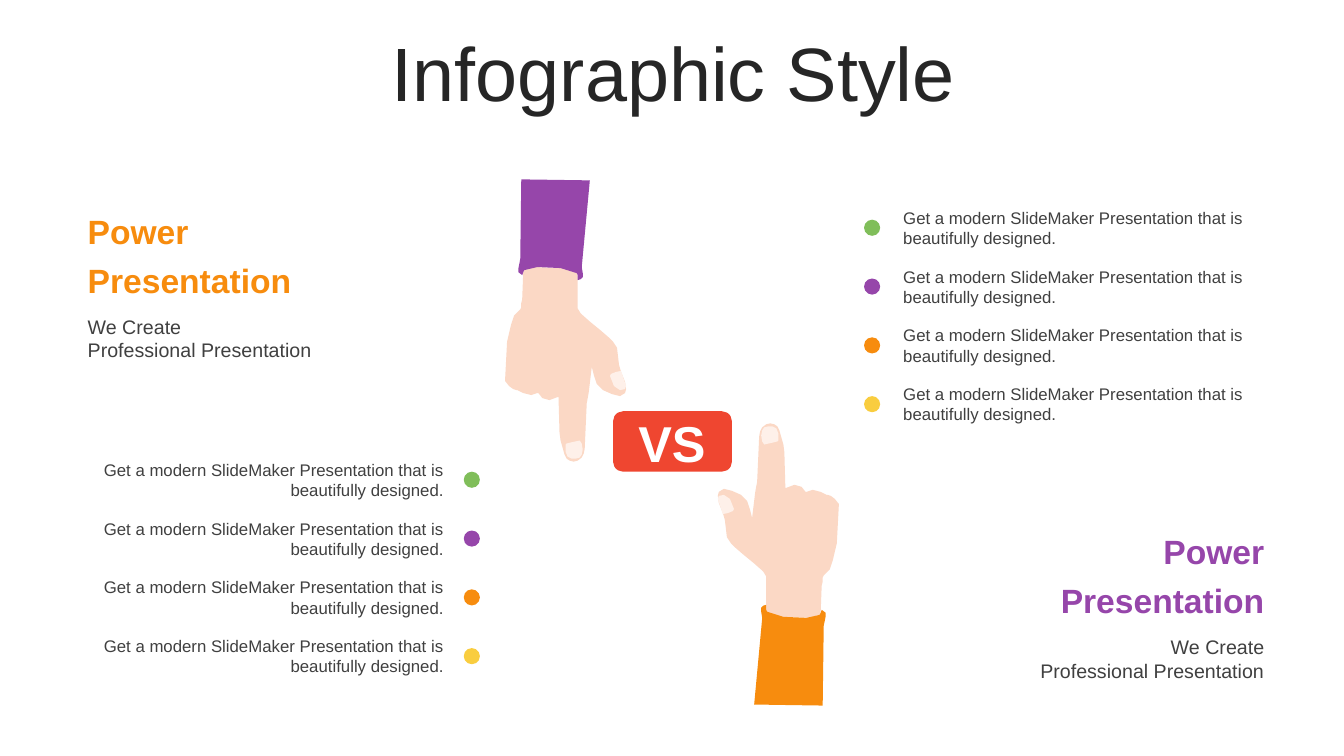
from pptx import Presentation
from pptx.dml.color import RGBColor
from pptx.enum.shapes import MSO_SHAPE
from pptx.enum.text import MSO_ANCHOR, PP_ALIGN
from pptx.util import Inches, Pt

FONT = "Arial"
INK = RGBColor(0x26, 0x26, 0x26)
GREY = RGBColor(0x40, 0x40, 0x40)
WHITE = RGBColor(0xFF, 0xFF, 0xFF)
GREEN = RGBColor(0x80, 0xBE, 0x5A)
PURPLE = RGBColor(0x96, 0x46, 0xAA)
ORANGE = RGBColor(0xF7, 0x8C, 0x0E)
YELLOW = RGBColor(0xF9, 0xCD, 0x3F)
RED = RGBColor(0xEF, 0x46, 0x30)
SKIN = RGBColor(0xFB, 0xD8, 0xC5)
NAIL = RGBColor(0xFE, 0xF0, 0xE9)

DOT_COLORS = [GREEN, PURPLE, ORANGE, YELLOW]
POINT_TEXT = "Get a modern SlideMaker Presentation that is beautifully designed."

# Outlines of the pointing hand, in hundredths of an inch
HAND = [
    (114, 208), (115, 181), (116, 177), (116, 173), (117, 171), (123, 165),
    (126, 156), (130, 139), (132, 101), (132, 100), (128, 95), (124, 92),
    (121, 91), (120, 91), (114, 88), (106, 86), (100, 88), (99, 88),
    (95, 83), (88, 81), (80, 84), (79, 84), (78, 49), (77, 41), (73, 27),
    (71, 23), (68, 21), (64, 20), (60, 21), (56, 24), (54, 28), (53, 33),
    (51, 78), (50, 83), (49, 89), (46, 114), (44, 106), (41, 97), (35, 91),
    (26, 87), (18, 85), (13, 88), (12, 92), (13, 99), (17, 109), (19, 116),
    (21, 133), (25, 139), (29, 143), (37, 150), (48, 159), (57, 167),
    (60, 172), (60, 205), (61, 208), (77, 212), (102, 213), (113, 210),
]
SLEEVE = [
    (48, 299), (56, 213), (55, 207), (55, 203), (57, 201), (60, 200),
    (60, 205), (61, 207), (77, 212), (100, 213), (113, 210), (114, 208),
    (115, 205), (119, 208), (119, 211), (117, 221), (116, 300),
]
THUMB_NAIL = [(12, 95), (13, 92), (18, 91), (24, 95), (28, 105), (27, 107),
              (22, 109), (17, 110)]
FINGER_NAIL = [(72, 30), (72, 37), (71, 38), (67, 39), (58, 41), (56, 38),
               (55, 32), (56, 27), (58, 24), (62, 23), (66, 23), (70, 25)]


def paint(shape, color):
    shape.shadow.inherit = False
    shape.fill.solid()
    shape.fill.fore_color.rgb = color
    shape.line.fill.background()


def add_text(page, box, lines, size, color, bold=False, align=PP_ALIGN.LEFT,
             spacing=None, anchor=MSO_ANCHOR.TOP, insets=None):
    frame = page.shapes.add_textbox(*map(Inches, box)).text_frame
    frame.word_wrap = True
    frame.vertical_anchor = anchor
    if insets:
        (frame.margin_left, frame.margin_top,
         frame.margin_right, frame.margin_bottom) = map(Inches, insets)
    for index, line in enumerate(lines):
        para = frame.add_paragraph() if index else frame.paragraphs[0]
        para.alignment = align
        if spacing:
            para.line_spacing = spacing
        span = para.add_run()
        span.text = line
        span.font.name = FONT
        span.font.size = Pt(size)
        span.font.bold = bold
        span.font.color.rgb = color


def add_heading(page, box, color, align):
    left, top, width, height = box
    insets = (0.08, 0, 0.04, 0)
    add_text(page, (left, top, width, 0.94), ["Power", "Presentation"], 24,
             color, bold=True, align=align, spacing=Pt(35), insets=insets)
    add_text(page, (left, top + height - 0.47, width, 0.47),
             ["We Create", "Professional Presentation"], 14, GREY,
             align=align, insets=insets)


def add_points(page, box, dots_on_right):
    left, top, width, height = box
    text_width, text_height, dot = 3.71, 0.5, 0.16
    pitch = (height - text_height) / (len(DOT_COLORS) - 1)
    if dots_on_right:
        text_left, dot_left, align = left, left + width - dot, PP_ALIGN.RIGHT
    else:
        text_left, dot_left, align = left + width - text_width, left, PP_ALIGN.LEFT
    for row, color in enumerate(DOT_COLORS):
        row_top = top + row * pitch
        add_text(page, (text_left, row_top, text_width, text_height),
                 [POINT_TEXT], 12, GREY, align=align)
        bullet = page.shapes.add_shape(
            MSO_SHAPE.OVAL, Inches(dot_left), Inches(row_top + 0.17),
            Inches(dot), Inches(dot))
        paint(bullet, color)


def add_hand(page, left, top, sleeve_color, direction):
    """Draw a hand from its origin; direction -1 turns it half a circle."""
    parts = [(HAND, SKIN), (SLEEVE, sleeve_color),
             (THUMB_NAIL, NAIL), (FINGER_NAIL, NAIL)]
    for outline, color in parts:
        points = [(x * direction, y * direction) for x, y in outline]
        builder = page.shapes.build_freeform(*points[0], scale=Inches(0.01))
        builder.add_line_segments(points[1:], close=True)
        paint(builder.convert_to_shape(Inches(left), Inches(top)), color)


def add_badge(page, box):
    left, top, width, height = box
    badge = page.shapes.add_shape(MSO_SHAPE.ROUNDED_RECTANGLE, *map(Inches, box))
    paint(badge, RED)
    add_text(page, (left + 0.09, top - 0.05, width - 0.19, height + 0.11),
             ["VS"], 36, WHITE, bold=True, align=PP_ALIGN.CENTER,
             anchor=MSO_ANCHOR.MIDDLE)


def main():
    deck = Presentation()
    deck.slide_width, deck.slide_height = Inches(13.33), Inches(7.5)
    page = deck.slides.add_slide(deck.slide_layouts[6])

    # Title
    add_text(page, (0.35, 0.37, 12.66, 0.79), ["Infographic Style"], 54, INK,
             align=PP_ALIGN.CENTER, spacing=0.9, anchor=MSO_ANCHOR.MIDDLE)

    # Two hands facing each other around the badge
    add_hand(page, 7, 4, ORANGE, 1)
    add_hand(page, 6.33, 4.78, PURPLE, -1)
    add_badge(page, (6.08, 4.08, 1.18, 0.6))

    # Points and headings of both sides
    add_points(page, (8.57, 2.01, 4, 2.25), dots_on_right=False)
    add_points(page, (0.79, 4.51, 3.97, 2.25), dots_on_right=True)
    add_heading(page, (0.79, 2.01, 2.56, 1.58), ORANGE, PP_ALIGN.LEFT)
    add_heading(page, (10.02, 5.18, 2.56, 1.59), PURPLE, PP_ALIGN.RIGHT)

    deck.save("out.pptx")


if __name__ == "__main__":
    main()
